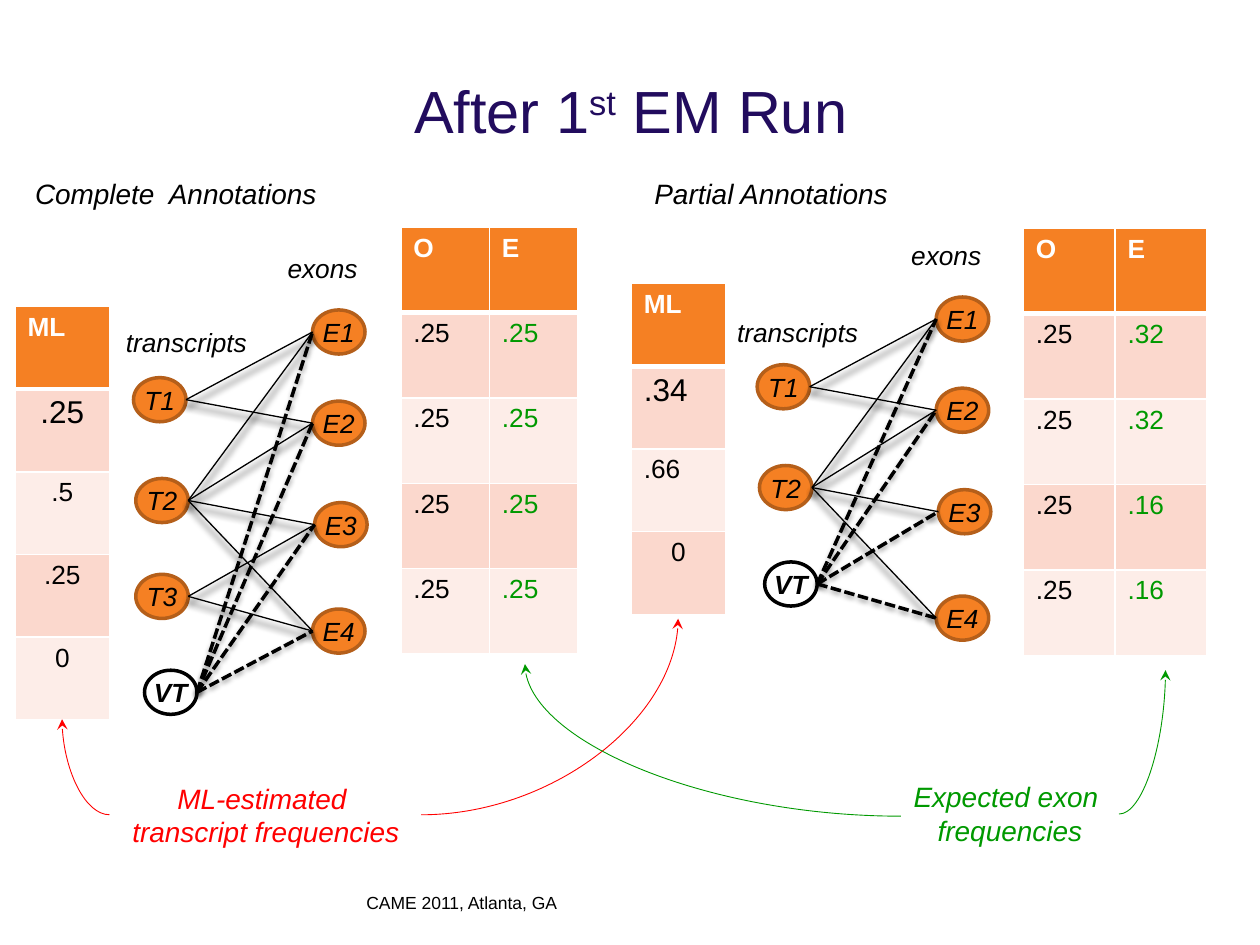
from lxml.etree import SubElement
from pptx import Presentation
from pptx.dml.color import RGBColor
from pptx.enum.dml import MSO_LINE
from pptx.enum.shapes import MSO_CONNECTOR, MSO_SHAPE
from pptx.enum.text import MSO_ANCHOR, PP_ALIGN
from pptx.oxml.ns import qn
from pptx.util import Pt

BLACK = RGBColor(0, 0, 0)
WHITE = RGBColor(0xFF, 0xFF, 0xFF)
NAVY = RGBColor(0x22, 0x0C, 0x5E)
ORANGE = RGBColor(0xF5, 0x80, 0x23)
RUST = RGBColor(0xB5, 0x5F, 0x1A)
PEACH = RGBColor(0xFB, 0xD8, 0xCD)
PALE = RGBColor(0xFD, 0xED, 0xE8)
RED = RGBColor(0xFF, 0, 0)
GREEN = RGBColor(0, 0x99, 0)

LEFT, MID = PP_ALIGN.LEFT, PP_ALIGN.CENTER
NODE_W, NODE_H = 30, 25.2

# Node corners and edges of the left graph; the right one is shifted
EXONS = {"E1": (178.6, 177.1), "E2": (178.6, 229.2),
         "E3": (179.8, 287.2), "E4": (178.6, 348)}
SCRIPTS = {"T1": (76.3, 215.8), "T2": (77.6, 273.4), "T3": (77.6, 328.2)}
EDGES = {"T1": ["E1", "E2"], "T2": list(EXONS), "T3": ["E3", "E4"]}


def write(frame, text, size=15, color=BLACK, bold=False, italic=False,
          align=MID):
    """Fill a frame: newline splits paragraphs, ^ marks superscript."""
    for i, line in enumerate(text.split("\n")):
        para = frame.add_paragraph() if i else frame.paragraphs[0]
        para.alignment = align
        for j, part in enumerate(line.split("^")):
            run = para.add_run()
            run.text = part
            font = run.font
            font.name, font.size = "Arial", Pt(size)
            font.bold, font.italic = bold, italic
            font.color.rgb = color
            if j % 2:
                run._r.get_or_add_rPr().set("baseline", "30000")


class Page:
    font = {"italic": True}

    def __init__(self, deck):
        self.slide = deck.slides.add_slide(deck.slide_layouts[5])
        self.shapes = self.slide.shapes

    def title(self, text, x, y, w, h):
        box = self.shapes.title
        box.left, box.top, box.width, box.height = map(Pt, (x, y, w, h))
        frame = box.text_frame
        frame.margin_left = frame.margin_right = 0
        frame.margin_top = frame.margin_bottom = 0
        frame.vertical_anchor = MSO_ANCHOR.MIDDLE
        write(frame, text, size=34, color=NAVY)

    def label(self, text, x, y, w, h, **fmt):
        frame = self.shapes.add_textbox(*map(Pt, (x, y, w, h))).text_frame
        frame.word_wrap = True
        write(frame, text, **{**self.font, **fmt})

    def node(self, text, x, y, fill=ORANGE, edge=RUST, bold=False):
        oval = self.shapes.add_shape(
            MSO_SHAPE.OVAL, *map(Pt, (x, y, NODE_W, NODE_H)))
        oval.shadow.inherit = False
        oval.fill.solid()
        oval.fill.fore_color.rgb = fill
        oval.line.color.rgb = edge
        oval.line.width = Pt(2)
        frame = oval.text_frame
        frame.margin_left = frame.margin_right = 0
        frame.margin_top = frame.margin_bottom = 0
        frame.vertical_anchor = MSO_ANCHOR.MIDDLE
        frame.word_wrap = False
        write(frame, text, bold=bold, **self.font)

    def line(self, kind, ends, color, width):
        link = self.shapes.add_connector(kind, *map(Pt, ends))
        link.line.color.rgb = color
        link.line.width = Pt(width)
        return link, SubElement(link._element.spPr, qn("a:effectLst"))

    def edge(self, start, end, dashed=False):
        ends = (start[0] + NODE_W, start[1] + NODE_H / 2,
                end[0], end[1] + NODE_H / 2)
        link, effect = self.line(MSO_CONNECTOR.STRAIGHT, ends, BLACK,
                                 2 if dashed else 0.75)
        if dashed:
            link.line.dash_style = MSO_LINE.SQUARE_DOT
        blur, dist, alpha = (3.1, 1.6, 38) if dashed else (4, 4, 100)
        cast = SubElement(effect, qn("a:outerShdw"), blurRad=str(Pt(blur)),
                          dist=str(Pt(dist)), dir="5400000", rotWithShape="0")
        tint = SubElement(cast, qn("a:srgbClr"), val=str(BLACK))
        SubElement(tint, qn("a:alpha"), val=str(alpha * 1000))

    def curve(self, tip, tail, color):
        """Quarter curve leaving the tip downwards, as a turned connector."""
        run, drop = abs(tail[0] - tip[0]), tail[1] - tip[1]
        x = (tip[0] + tail[0] - drop) / 2
        y = (tip[1] + tail[1] - run) / 2
        link, _ = self.line(MSO_CONNECTOR.CURVE,
                            (x, y, x + drop, y + run), color, 0.5)
        props = link._element.spPr
        props.find(qn("a:prstGeom")).set("prst", "curvedConnector2")
        turn = props.find(qn("a:xfrm"))
        if tail[0] > tip[0]:
            turn.set("rot", str(270 * 60000))
            turn.set("flipH", "1")
        else:
            turn.set("rot", str(90 * 60000))
        SubElement(props.find(qn("a:ln")), qn("a:headEnd"), type="stealth")

    def table(self, rows, x, y, col, row, look):
        """Draw a table; look(r, c) gives extra format for a body cell."""
        wide = len(rows[0])
        grid = self.shapes.add_table(
            len(rows), wide, *map(Pt, (x, y, col * wide, row * len(rows)))).table
        for c in range(wide):
            grid.columns[c].width = Pt(col)
        for r, texts in enumerate(rows):
            grid.rows[r].height = Pt(row)
            for c, text in enumerate(texts):
                cell = grid.cell(r, c)
                self.border(cell, r)
                cell.fill.solid()
                cell.fill.fore_color.rgb = (
                    ORANGE if r == 0 else PEACH if r % 2 else PALE)
                fmt = look(r, c) if r else {"color": WHITE, "bold": True}
                write(cell.text_frame, text, **{"align": LEFT, **fmt})

    def border(self, cell, r):
        props = cell._tc.get_or_add_tcPr()
        thick = {(0, "lnB"), (1, "lnT")}
        for side in ("lnL", "lnR", "lnT", "lnB"):
            width = Pt(3 if (r, side) in thick else 1)
            line = SubElement(props, qn("a:" + side), w=str(width))
            fill = SubElement(line, qn("a:solidFill"))
            SubElement(fill, qn("a:srgbClr"), val=str(WHITE))

    def graph(self, dx, dy, names, virtual):
        spots = {name: (x + dx, y + dy)
                 for name, (x, y) in {**SCRIPTS, **EXONS}.items()}
        for name in [*names, *EXONS]:
            self.node(name, *spots[name])
        for name in names:
            for exon in EDGES[name]:
                self.edge(spots[name], spots[exon])
        self.node("VT", *virtual, fill=WHITE, edge=BLACK, bold=True)
        for exon in EXONS:
            self.edge(virtual, spots[exon], dashed=True)
        self.label("exons", 140.4 + dx, 140.4 + dy, 87.8, 25.2)


def main():
    deck = Presentation()
    deck.slide_width, deck.slide_height = Pt(720), Pt(540)
    page = Page(deck)
    page.title("After 1^st^ EM Run", 31.7, 38.2, 657.4, 49)

    # Graphs
    page.graph(0, 0, ["T1", "T2", "T3"], (82.6, 383))
    page.graph(356.4, -7.4, ["T1", "T2"], (437, 321.1))
    page.label("transcripts", 58.3, 182.9, 96.5, 25.2)
    page.label("transcripts", 407.5, 177.1, 96.5, 25.2)

    # Observed and expected frequencies
    def pair(r, c):
        return {"color": GREEN if c else BLACK}

    for x, y, col, values in (
            (229, 129.8, 50.6, [".25"] * 4),
            (584.8, 130.5, 52.3, [".32", ".32", ".16", ".16"])):
        rows = [["O", "E"]] + [[".25", value] for value in values]
        page.table(rows, x, y, col, 48.8, pair)

    # ML estimates, centred from a given row on
    for x, y, first, values in (
            (8.6, 175, 1, [".25", ".5", ".25", "0"]),
            (360.7, 162, 3, [".34", ".66", "0"])):
        page.table([["ML"]] + [[value] for value in values], x, y, 54, 47.3,
                   lambda r, c: {"size": 18 if r == 1 else 15,
                                 "align": MID if r >= first else LEFT})

    # Captions and their arrows
    page.label("ML-estimated \ntranscript frequencies", 62.6, 442.8,
               178.6, 46, size=16, color=RED)
    page.label("Expected exon \nfrequencies", 514.8, 442.1,
               124.6, 46, size=16, color=GREEN)
    page.curve((35.5, 411), (62.6, 465.6), RED)
    page.curve((387.5, 353.5), (240.6, 465.6), RED)
    page.curve((666, 383), (639.4, 465.2), GREEN)
    page.curve((300, 379.5), (514.8, 466.4), GREEN)

    # Headings and footer
    page.label("Complete  Annotations", 0, 97.2, 200.9, 26.6, size=16)
    page.label("Partial Annotations", 284.4, 97.2, 312.5, 26.6, size=16)
    page.label("CAME 2011, Atlanta, GA", 202.3, 506.2, 352, 33.8,
               size=10, italic=False, align=LEFT)
    deck.save("out.pptx")


if __name__ == "__main__":
    main()
